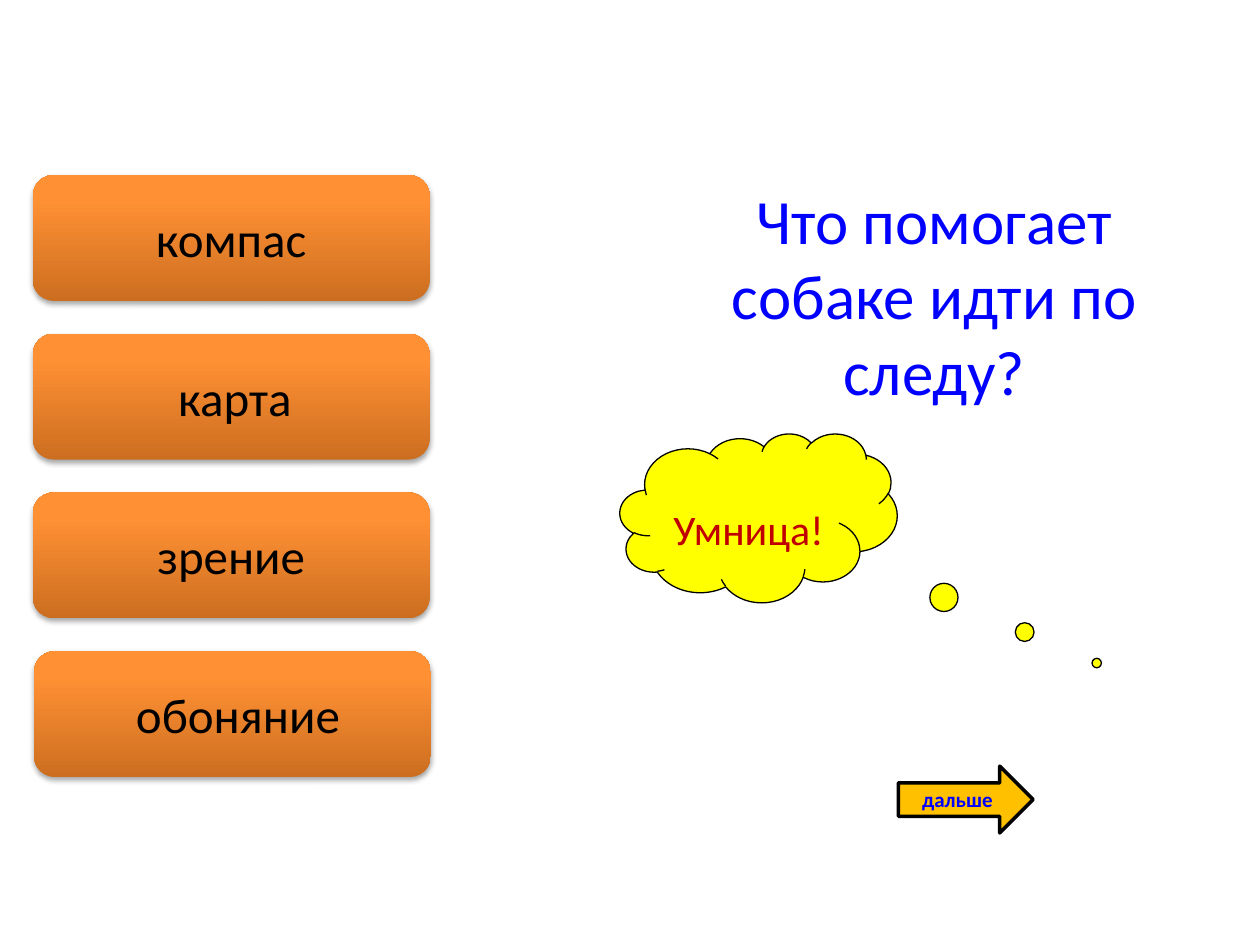
from lxml.etree import SubElement
from copy import deepcopy
from pptx import Presentation
from pptx.dml.color import RGBColor
from pptx.enum.shapes import MSO_SHAPE
from pptx.enum.text import MSO_ANCHOR, PP_ALIGN
from pptx.oxml.ns import qn
from pptx.util import Pt

STOPS = ((0, "CC6E20"), (0.8, "FF9034"), (1, "FF9136"))
ANSWERS = (("компас", 18.7, 0), ("карта", 18.7, 4.1),
           ("зрение", 18.7, 0), ("обоняние", 19.4, 6.3))


def rgb(value):
    return RGBColor.from_string(value)


def write(sp, text, size, color, bold=False, **frame):
    tf = sp.text_frame
    for name, value in {"word_wrap": True, **frame}.items():
        setattr(tf, name, value)
    p = tf.paragraphs[0]
    p.alignment = PP_ALIGN.CENTER
    r = p.add_run()
    r.text = text
    for name, value in {"name": "Calibri", "size": Pt(size), "bold": bold}.items():
        setattr(r.font, name, value)
    r.font.color.rgb = rgb(color)


def add_shape(s, kind, box):
    sp = s.shapes.add_shape(kind, *map(Pt, box))
    sp.shadow.inherit = False
    return sp


def add_outlined(s, kind, box, fill, width):
    sp = add_shape(s, kind, box)
    sp.fill.solid()
    sp.fill.fore_color.rgb = rgb(fill)
    sp.line.color.rgb = rgb("000000")
    sp.line.width = Pt(width)
    return sp


def fill_gradient(sp):
    sp.fill.gradient()
    sp.fill.gradient_angle = 90
    stop_list = sp._element.spPr.find(qn("a:gradFill")).find(qn("a:gsLst"))
    stop_list.append(deepcopy(stop_list[-1]))
    for stop, (position, color) in zip(sp.fill.gradient_stops, STOPS):
        stop.position = position
        stop.color.rgb = rgb(color)


def cast_shadow(sp):
    effects = sp._element.spPr.find(qn("a:effectLst"))
    shadow = SubElement(effects, qn("a:outerShdw"), blurRad=str(Pt(3.1)),
                        dist=str(Pt(1.8)), dir="5400000", rotWithShape="0")
    color = SubElement(shadow, qn("a:srgbClr"), val="000000")
    SubElement(color, qn("a:alpha"), val="35000")


def add_answers(s, top, width, height, pitch):
    for i, (text, left, indent) in enumerate(ANSWERS):
        sp = add_shape(s, MSO_SHAPE.ROUNDED_RECTANGLE,
                       (left, top + i * pitch, width, height))
        sp.line.fill.background()
        fill_gradient(sp)
        cast_shadow(sp)
        write(sp, text, 28, "000000", vertical_anchor=MSO_ANCHOR.MIDDLE,
              margin_left=Pt(7.2 + indent))


def add_question(s, box):
    sp = s.shapes.add_textbox(*map(Pt, box))
    write(sp, "Что помогает собаке идти по следу?", 36, "0000FF")


def add_praise(s, box):
    sp = add_outlined(s, MSO_SHAPE.CLOUD_CALLOUT, box, "FFFF00", 0.75)
    sp.adjustments[0], sp.adjustments[1] = 1.22, 0.86
    write(sp, "Умница!", 24, "C00000", vertical_anchor=MSO_ANCHOR.TOP,
          margin_top=Pt(25.6))


def add_next(s, box):
    sp = add_outlined(s, MSO_SHAPE.RIGHT_ARROW, box, "FFC000", 2)
    write(sp, "дальше", 12, "0000FF", True, vertical_anchor=MSO_ANCHOR.MIDDLE)


def main():
    prs = Presentation()
    prs.slide_width, prs.slide_height = Pt(720), Pt(540)
    s = prs.slides.add_slide(prs.slide_layouts[6])
    add_praise(s, (354.3, 247.7, 158.4, 96.5))
    add_next(s, (513.4, 437.8, 77, 38.2))
    add_answers(s, 100, 226.8, 72, 90.7)
    add_question(s, (372.2, 100, 323.3, 138.2))
    prs.save("out.pptx")


if __name__ == "__main__":
    main()
